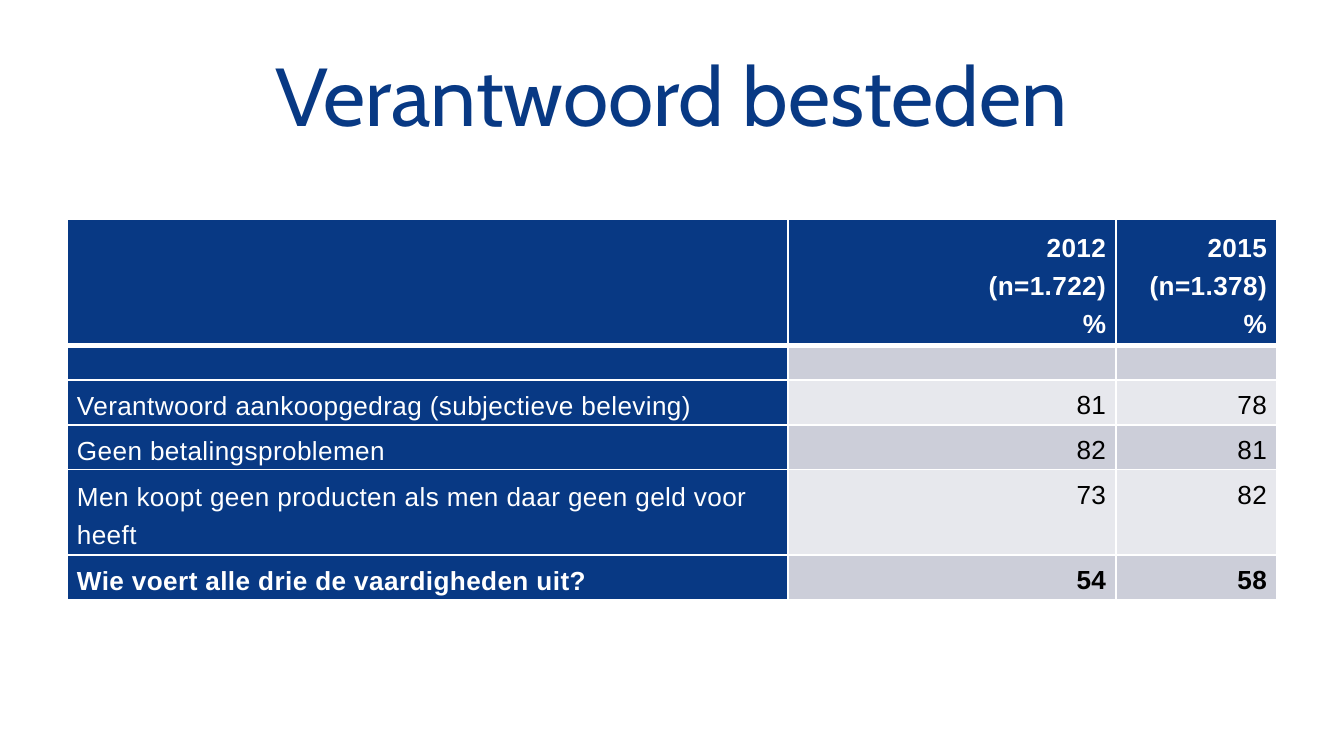
from pptx import Presentation
from pptx.dml.color import RGBColor
from pptx.enum.text import MSO_ANCHOR as ANCHOR, PP_ALIGN as ALIGN
from pptx.oxml.ns import qn
from pptx.util import Pt
from lxml.etree import SubElement

PX = 914400 / 134.4
NAVY, WHITE, BLACK = "083984", "FFFFFF", "000000"
BANDS = ("CCCED9", "E7E8ED")

COLUMNS = (721, 328, 161)
ROWS = (
    (119, ("", "2012\n(n=1.722)\n%", "2015\n(n=1.378)\n%")),
    (35, ("", "", "")),
    (44, ("Verantwoord aankoopgedrag (subjectieve beleving)", "81", "78")),
    (43, ("Geen betalingsproblemen", "82", "81")),
    (82, ("Men koopt geen producten als men daar geen geld voor heeft", "73", "82")),
    (43, ("Wie voert alle drie de vaardigheden uit?", "54", "58")),
)


def px(length):
    return round(length * PX)


def color(value):
    return RGBColor.from_string(value)


def write(frame, text, font="Arial", size=14, ink=BLACK, bold=False,
          align=ALIGN.LEFT, line_spacing=None, tracking=None):
    frame.word_wrap = True
    frame.text = text
    for paragraph in frame.paragraphs:
        paragraph.alignment = align
        paragraph.line_spacing = line_spacing
        paragraph.font.size = Pt(size)
        for run in paragraph.runs:
            run.font.name = font
            run.font.size = Pt(size)
            run.font.bold = bold
            run.font.color.rgb = color(ink)
            if tracking:
                run.font._element.set("spc", str(round(tracking * 100)))


def set_border(cell, side, points):
    line = SubElement(cell._tc.get_or_add_tcPr(), qn(f"a:ln{side}"), w=str(Pt(points)))
    fill = SubElement(line, qn("a:solidFill"))
    SubElement(fill, qn("a:srgbClr"), val=WHITE)


def style_cell(cell, text, row, column):
    header, label = row == 0, column == 0
    cell.margin_left = cell.margin_right = px(10)
    cell.margin_top = cell.margin_bottom = px(2)
    cell.vertical_anchor = ANCHOR.MIDDLE if header or label else ANCHOR.TOP

    # The header is set off from the body by a thicker rule
    widths = {"L": 1, "R": 1, "T": 3 if row == 1 else 1, "B": 3 if header else 1}
    for side, points in widths.items():
        set_border(cell, side, points)
    cell.fill.solid()
    cell.fill.fore_color.rgb = color(NAVY if header or label else BANDS[(row - 1) % 2])

    if text:
        write(cell.text_frame, text, ink=WHITE if header or label else BLACK,
              bold=row in (0, len(ROWS) - 1),
              align=ALIGN.LEFT if label else ALIGN.RIGHT,
              line_spacing=1.3, tracking=0.2)
    else:
        write(cell.text_frame, "", size=10)


def add_title(slide, text):
    title = slide.shapes.add_textbox(px(67), px(31), px(1210), px(126))
    title.text_frame.vertical_anchor = ANCHOR.MIDDLE
    write(title.text_frame, text, font="Cabin", size=44, ink=NAVY, align=ALIGN.CENTER)


def add_results(slide):
    height = sum(row_height for row_height, _ in ROWS)
    results = slide.shapes.add_table(len(ROWS), len(COLUMNS), px(67), px(219),
                                     px(sum(COLUMNS)), px(height)).table
    for column, width in zip(results.columns, COLUMNS):
        column.width = px(width)
    for row, (row_height, texts) in enumerate(ROWS):
        results.rows[row].height = px(row_height)
        for column, text in enumerate(texts):
            style_cell(results.cell(row, column), text, row, column)


def main():
    deck = Presentation()
    deck.slide_width, deck.slide_height = px(1344), px(756)
    slide = deck.slides.add_slide(deck.slide_layouts[6])
    add_title(slide, "Verantwoord besteden")
    add_results(slide)
    deck.save("out.pptx")


if __name__ == "__main__":
    main()
